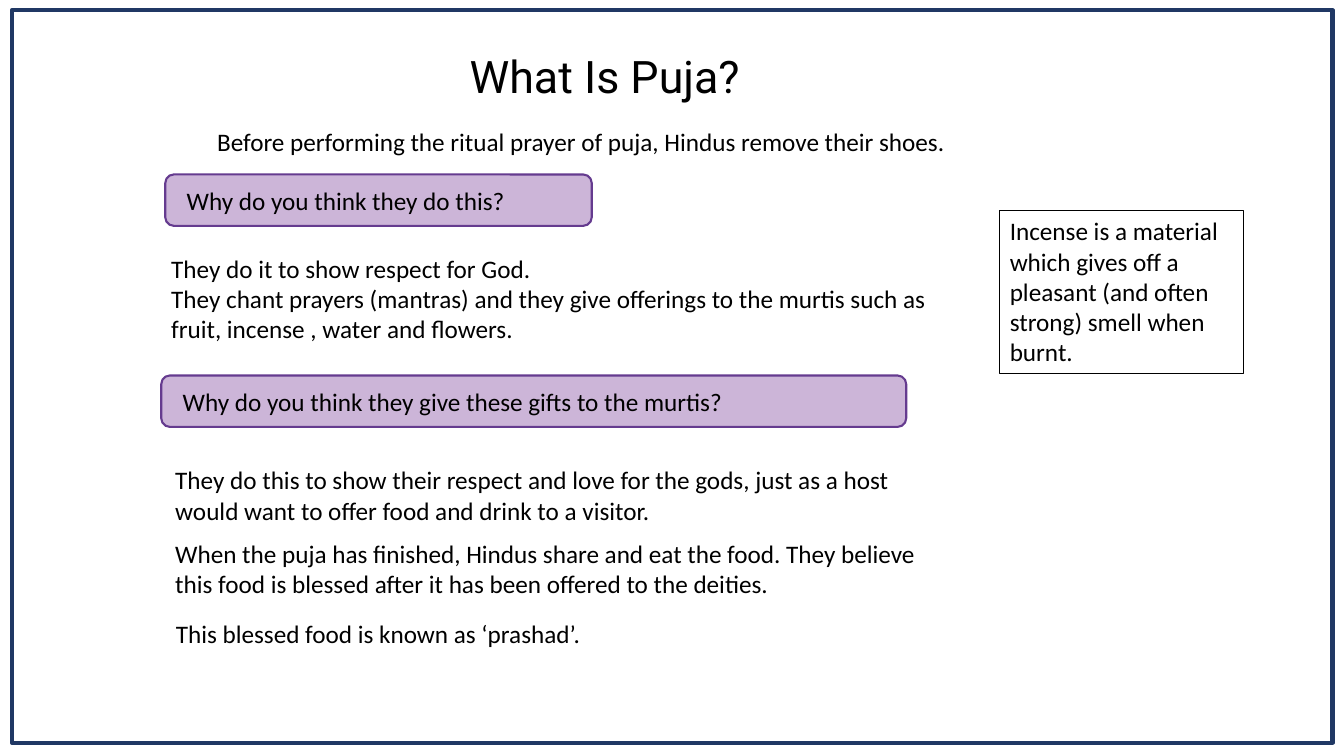
from pptx import Presentation
from pptx.dml.color import RGBColor
from pptx.enum.shapes import MSO_SHAPE as SHAPE
from pptx.enum.text import MSO_ANCHOR as ANCHOR, PP_ALIGN as ALIGN
from pptx.util import Pt


def rgb(code):
    return RGBColor.from_string(code)


def add_box(kind, place, lines=(), fill=None, line=None, inset=(7.2, 3.6),
            anchor=ANCHOR.TOP, align=ALIGN.LEFT, font="Calibri", size=18):
    """Add a shape, or a text box if kind is None; line is (colour, width)."""
    place = [Pt(v) for v in place]
    if kind is None:
        s = shapes.add_textbox(*place)
    else:
        s = shapes.add_shape(kind, *place)
        s.shadow.inherit = False
        s.fill.background()
        s.line.fill.background()
    if fill:
        s.fill.solid()
        s.fill.fore_color.rgb = rgb(fill)
    if line:
        s.line.color.rgb = rgb(line[0])
        s.line.width = Pt(line[1])
    tf = s.text_frame
    tf.word_wrap = True
    tf.vertical_anchor = anchor
    tf.margin_left = tf.margin_right = Pt(inset[0])
    tf.margin_top = tf.margin_bottom = Pt(inset[1])
    tf.text = "\n".join(lines)
    for p in tf.paragraphs:
        p.alignment = align
        for r in p.runs:
            r.font.name = font
            r.font.size = Pt(size)
            r.font.color.rgb = rgb("000000")
    return s


prs = Presentation()
prs.slide_width, prs.slide_height = Pt(960), Pt(540)
shapes = prs.slides.add_slide(prs.slide_layouts[6]).shapes

# Page border and heading
add_box(SHAPE.RECTANGLE, (8.6, 7.2, 943.2, 523.4), line=("203864", 3))
title = add_box(None, (328.3, 17.3, 289.4, 78.5), ["What Is Puja?"],
                anchor=ANCHOR.MIDDLE, font="Roboto", size=32)
title.text_frame.paragraphs[0].line_spacing = 0.9
add_box(SHAPE.ROUNDED_RECTANGLE, (147.6, 82.8, 582.5, 34.6),
        ["Before performing the ritual prayer of puja, Hindus remove their shoes."],
        inset=(5.8, 5.8))

# Questions
for left, top, width, question in [
    (118.1, 124.6, 304.6, "Why do you think they do this?"),
    (115.2, 268.2, 532.1, "Why do you think they give these gifts to the murtis?"),
]:
    add_box(SHAPE.ROUNDED_RECTANGLE, (left, top, width, 36.7), [question],
            fill="CCB5D8", line=("653B8F", 1.5), inset=(13.5, 5.8),
            anchor=ANCHOR.MIDDLE)

# Answers
for left, top, height, lines in [
    (115.2, 177.1, 72.7, [
        "They do it to show respect for God.",
        "They chant prayers (mantras) and they give offerings to the murtis "
        "such as fruit, incense , water and flowers."]),
    (118.1, 328.3, 51.1, [
        "They do this to show their respect and love for the gods, just as a "
        "host would want to offer food and drink to a visitor."]),
    (118.1, 380.9, 51.1, [
        "When the puja has finished, Hindus share and eat the food. They believe "
        "this food is blessed after it has been offered to the deities."]),
]:
    add_box(None, (left, top, 573.1, height), lines)

prashad = add_box(None, (103, 437.8, 334.1, 28.8),
                  ["This blessed food is known as ‘prashad’."], align=ALIGN.CENTER)
prashad.text_frame.word_wrap = False

# Definition
add_box(SHAPE.RECTANGLE, (714.2, 150.5, 174.2, 116.6),
        ["Incense is a material which gives off a pleasant (and often strong) "
         "smell when burnt."], line=("000000", 0.75))

prs.save("out.pptx")
